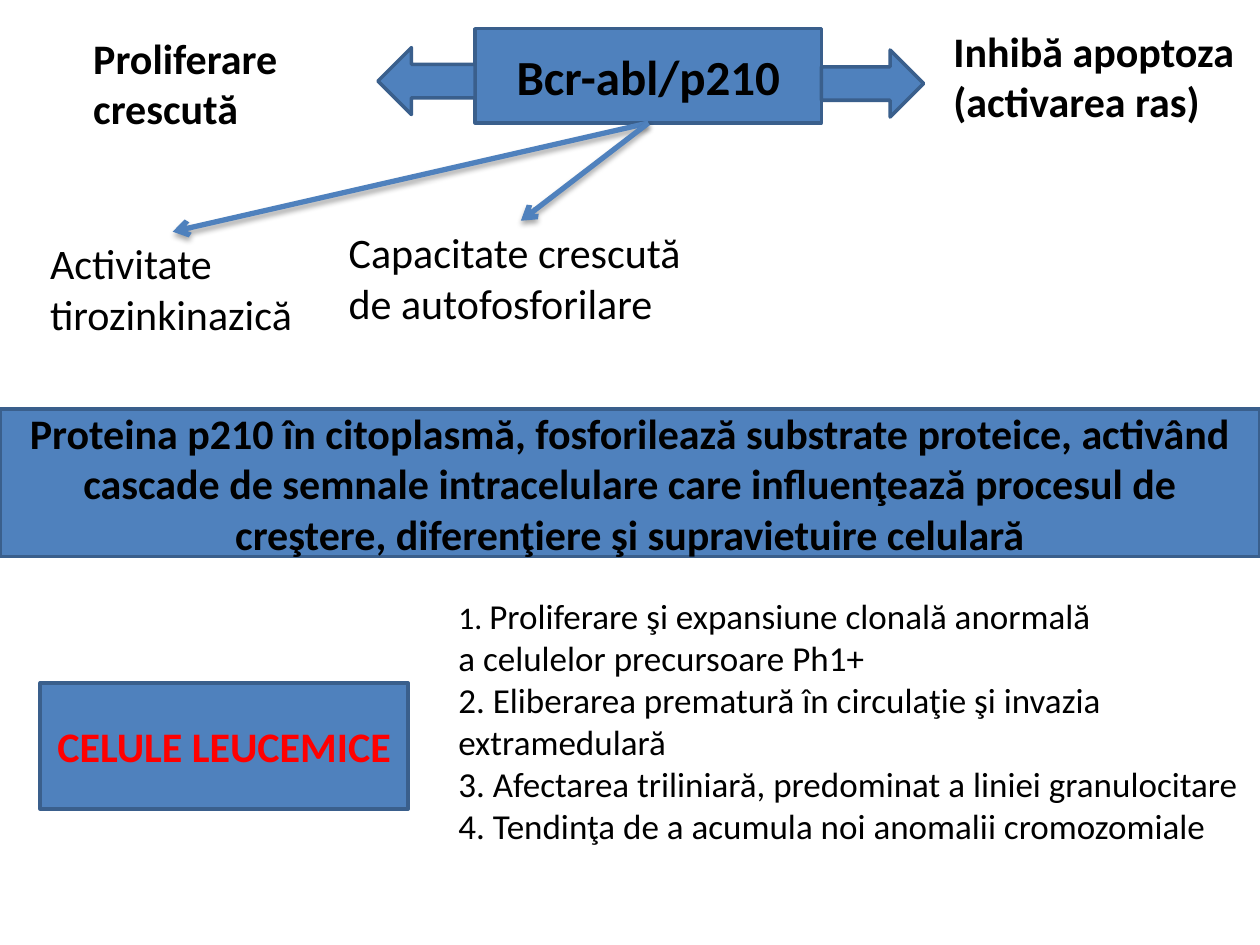
import lxml.etree
import pptx
import pptx.dml.color
import pptx.enum.shapes
import pptx.enum.text
import pptx.oxml
import pptx.util

Cm = pptx.util.Cm
Pt = pptx.util.Pt
Kind = pptx.enum.shapes.MSO_SHAPE
Fit = pptx.enum.text.MSO_AUTO_SIZE
SHADOW = (
    '<a:effectLst xmlns:a="http://schemas.openxmlformats.org/drawingml/2006/main">'
    '<a:outerShdw blurRad="40000" dist="23000" dir="5400000" rotWithShape="0">'
    '<a:srgbClr val="000000"><a:alpha val="35000"/></a:srgbClr>'
    '</a:outerShdw></a:effectLst>'
)


def tint(code):
    return pptx.dml.color.RGBColor.from_string(code)


class Board:
    """Holds the style and the current slide."""

    face = "Calibri"
    blue = "4F81BD"
    edge = "3A5F8C"
    ink = "000000"

    def __init__(self, slide):
        self.items = slide.shapes

    def style(self, para, size, bold=False, color=ink):
        font = para.font
        font.name, font.size, font.bold = self.face, Pt(size), bold
        font.color.rgb = tint(color)

    def shape(self, kind, *area):
        shape = self.items.add_shape(kind, *map(Cm, area))
        shape.shadow.inherit = False
        shape.fill.solid()
        shape.fill.fore_color.rgb = tint(self.blue)
        shape.line.color.rgb = tint(self.edge)
        shape.line.width = Pt(2)
        return shape

    def box(self, text, area, size=24, color=ink, before=0):
        box = self.shape(Kind.RECTANGLE, *area)
        frame = box.text_frame
        frame.word_wrap = True
        frame.vertical_anchor = pptx.enum.text.MSO_ANCHOR.MIDDLE
        para = frame.paragraphs[0]
        para.text = text
        para.alignment = pptx.enum.text.PP_ALIGN.CENTER
        para.space_before = Pt(before)
        self.style(para, size, True, color)
        return box

    def text(self, lines, area, size=24, bold=False, wrap=False):
        frame = self.items.add_textbox(*map(Cm, area)).text_frame
        frame.word_wrap = wrap
        frame.auto_size = Fit.NONE if wrap else Fit.SHAPE_TO_FIT_TEXT
        for i, line in enumerate(lines):
            para = frame.add_paragraph() if i else frame.paragraphs[0]
            para.text = line
            self.style(para, size, bold)
        return frame

    def arrow(self, box, x, y):
        line = self.items.add_connector(
            pptx.enum.shapes.MSO_CONNECTOR.STRAIGHT, 0, 0, Cm(x), Cm(y))
        line.begin_connect(box, 2)
        line.line.color.rgb = tint(self.blue)
        line.line.width = Pt(3)
        tail = pptx.oxml.ns.qn("a:tailEnd")
        lxml.etree.SubElement(line.line._get_or_add_ln(), tail, type="arrow")
        line._element.spPr.append(pptx.oxml.parse_xml(SHADOW))


def main():
    deck = pptx.Presentation()
    deck.slide_width, deck.slide_height = Cm(25.4), Cm(19.05)
    board = Board(deck.slides.add_slide(deck.slide_layouts[6]))

    gene = board.box("Bcr-abl/p210", (9.58, 0.58, 6.98, 1.9), 28)
    board.text(["Activitate", "tirozinkinazică"], (0.76, 4.67, 5.44, 2.31))
    board.text(["Capacitate crescută", "de autofosforilare"],
               (6.78, 4.45, 7.47, 2.31))
    board.box("Proteina p210 în citoplasmă, fosforilează substrate proteice, "
              "activând cascade de semnale intracelulare care influenţează "
              "procesul de creştere, diferenţiere şi supravietuire celulară",
              (0, 8.25, 25.4, 2.97), before=4.8)
    board.box("CELULE LEUCEMICE", (0.81, 13.77, 7.42, 2.54), color="FF0000")
    board.text(["Inhibă apoptoza", "(activarea ras)"],
               (18.97, 0.38, 6.22, 2.31), bold=True)
    board.text(["Proliferare", "crescută"], (1.63, 0.53, 4.45, 2.31), bold=True)
    board.shape(Kind.LEFT_ARROW, 7.62, 0.96, 1.96, 1.35)
    board.shape(Kind.RIGHT_ARROW, 16.56, 1.01, 2.06, 1.35)
    board.arrow(gene, 3.48, 4.67)
    board.arrow(gene, 10.5, 4.45)

    effects = board.text([
        "",
        "a celulelor precursoare Ph1+",
        "2. Eliberarea prematură în circulaţie şi invazia",
        "extramedulară",
        "3. Afectarea triliniară, predominat a liniei granulocitare",
        "4. Tendinţa de a acumula noi anomalii cromozomiale",
    ], (8.99, 11.86, 16.41, 6.25), 20, wrap=True)
    first = effects.paragraphs[0]
    for words, size in (("1. ", 18),
                        ("Proliferare şi expansiune clonală anormală", 20)):
        run = first.add_run()
        run.text = words
        run.font.size = Pt(size)

    deck.save("out.pptx")


if __name__ == "__main__":
    main()
